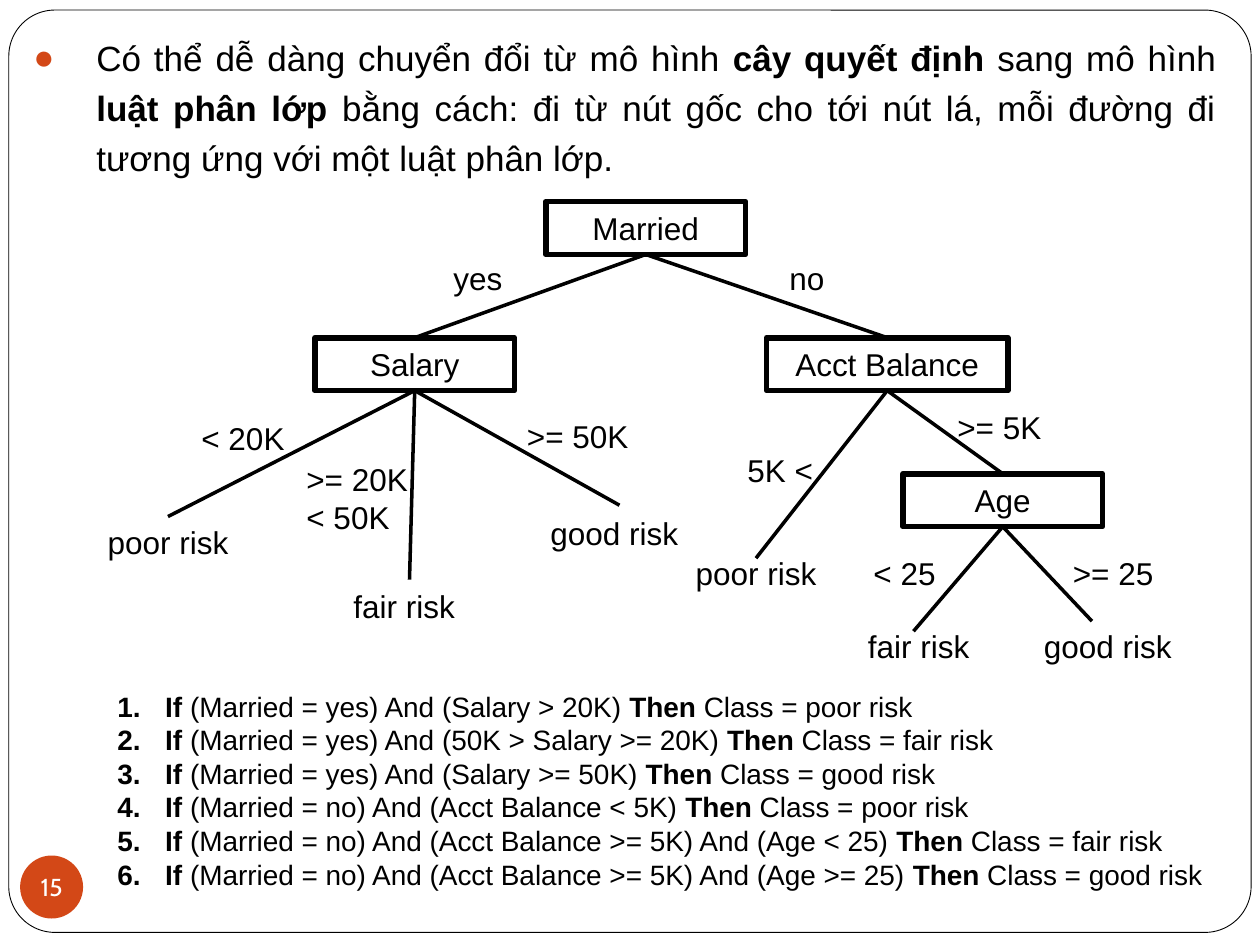
from lxml import etree
from pptx import Presentation
from pptx.dml.color import RGBColor
from pptx.enum.shapes import MSO_CONNECTOR, MSO_SHAPE
from pptx.enum.text import MSO_ANCHOR, MSO_AUTO_SIZE, PP_ALIGN
from pptx.oxml.ns import qn
from pptx.util import Inches, Pt

RECT, ROUND, OVAL = MSO_SHAPE.RECTANGLE, MSO_SHAPE.ROUNDED_RECTANGLE, MSO_SHAPE.OVAL
LEFT, MID, JUST = PP_ALIGN.LEFT, PP_ALIGN.CENTER, PP_ALIGN.JUSTIFY
STRAIGHT = MSO_CONNECTOR.STRAIGHT
TOP, BOTTOM = 0, 2

THEME = {
    "ink": RGBColor(0, 0, 0), "paper": RGBColor(255, 255, 255),
    "accent": RGBColor(0xD3, 0x48, 0x17),
    "font": "Arial", "num_font": "Cabin",
    "lead": 20, "node": 18, "rule": 16, "num": 14,
    "frame_line": 0.5, "box_line": 3.25, "edge_line": 2,
}

# Text between ** marks is bold.
LEAD = ("Có thể dễ dàng chuyển đổi từ mô hình **cây quyết định **sang mô hình "
        "**luật phân lớp **bằng cách: đi từ nút gốc cho tới nút lá, mỗi đường đi "
        "tương ứng với một luật phân lớp.")
RULES = [
    ("(Married = yes) And (Salary > 20K)", "poor"),
    ("(Married = yes) And (50K > Salary >= 20K)", "fair"),
    ("(Married = yes) And (Salary >= 50K)", "good"),
    ("(Married = no) And (Acct Balance < 5K)", "poor"),
    ("(Married = no) And (Acct Balance >= 5K) And (Age < 25)", "fair"),
    ("(Married = no) And (Acct Balance >= 5K) And (Age >= 25)", "good"),
]

# Across: columns of 1/12 inch. Tree levels are evenly spaced; other heights in inches.
COL, LEVEL, FIRST, BOX_H = 1 / 12, 1.08, 1.6, 0.42
BOXES = [  # name, parent, level, column, columns wide
    ("Married", None, 0, 52, 19),
    ("Salary", "Married", 1, 30, 19),
    ("Acct Balance", "Married", 1, 73, 23),
    ("Age", "Acct Balance", 2, 86, 19),
]
LEAVES = [  # class, parent, branch end (column, y), label (column, y)
    ("poor", "Salary", (16, 4.1), (9, 4.1)),
    ("fair", "Salary", (39, 4.6), (32, 4.61)),
    ("good", "Salary", (59, 4.01), (51, 4.03)),
    ("poor", "Acct Balance", (72, 4.43), (65, 4.35)),
    ("fair", "Age", (87, 5.01), (81, 4.93)),
    ("good", "Age", (104, 4.93), (98, 4.93)),
]
LEAF_W = {"poor": 14, "fair": 13, "good": 15}
TESTS = [  # lines, column, y, columns wide
    (["yes"], 42, 2.01, 8), (["no"], 74, 2.01, 8),
    (["< 20K"], 18, 3.28, 11), ([">= 20K", "< 50K"], 28, 3.6, 13),
    ([">= 50K"], 49, 3.26, 14), (["5K <"], 70, 3.53, 9),
    ([">= 5K"], 90, 3.19, 13), (["< 25"], 82, 4.35, 9),
    ([">= 25"], 101, 4.35, 11),
]


def assign(obj, form):
    for key, val in form.items():
        setattr(obj, key, val)


def write(shape, lines, size, align=LEFT, font="font", color="ink", **form):
    frame = shape.text_frame
    assign(frame, {"word_wrap": True, **form})
    for i, line in enumerate(lines):
        para = frame.paragraphs[0] if i == 0 else frame.add_paragraph()
        para.alignment = align
        for j, part in enumerate(line.split("**")):
            if part:
                run = para.add_run()
                run.text = part
                assign(run.font, {"size": Pt(THEME[size]), "name": THEME[font],
                                  "bold": j % 2 == 1})
                run.font.color.rgb = THEME[color]
    return frame.paragraphs


def note(shapes, lines, box, size, align=LEFT):
    area = shapes.add_textbox(*map(Inches, box))
    return write(area, lines, size, align, auto_size=MSO_AUTO_SIZE.SHAPE_TO_FIT_TEXT)


def draw(shapes, kind, box, fill=None, line=None):
    shape = shapes.add_shape(kind, *map(Inches, box))
    shape.shadow.inherit = False
    if fill:
        shape.fill.solid()
        shape.fill.fore_color.rgb = THEME[fill]
    else:
        shape.fill.background()
    if line:
        shape.line.color.rgb = THEME["ink"]
        shape.line.width = Pt(THEME[line])
    else:
        shape.line.fill.background()
    return shape


def branch(shapes, parent, child=None, end=(0, 0)):
    """Line from the foot of a box to the head of a box, or to a point."""
    line = shapes.add_connector(STRAIGHT, 0, 0, *map(Inches, end))
    line.begin_connect(parent, BOTTOM)
    if child is not None:
        line.end_connect(child, TOP)
    line.line.color.rgb = THEME["ink"]
    line.line.width = Pt(THEME["edge_line"])
    etree.SubElement(line._element.spPr, qn("a:effectLst"))


def bullet(para, indent, tag, color=None, **attrs):
    props = para._p.get_or_add_pPr()
    props.set("marL", str(Inches(indent)))
    props.set("indent", str(-Inches(indent)))
    if color:
        tint = etree.SubElement(props, qn("a:buClr"))
        etree.SubElement(tint, qn("a:srgbClr"), val=str(THEME[color]))
    etree.SubElement(props, qn("a:buFont"), typeface=THEME["font"])
    etree.SubElement(props, qn(tag), **attrs)


def tree(shapes):
    nodes = {}
    for name, _, level, col, wide in BOXES:
        box = (col * COL, FIRST + level * LEVEL, wide * COL, BOX_H)
        nodes[name] = draw(shapes, RECT, box, line="box_line")
        write(nodes[name], [name], "node", MID, vertical_anchor=MSO_ANCHOR.MIDDLE)
    for name, parent, *_ in BOXES:
        if parent:
            branch(shapes, nodes[parent], nodes[name])
    for kind, parent, (col, y), (left, top) in LEAVES:
        branch(shapes, nodes[parent], end=(col * COL, y))
        note(shapes, [f"{kind} risk"], (left * COL, top, LEAF_W[kind] * COL, 0.4),
             "node", MID)
    for lines, col, y, wide in TESTS:
        note(shapes, lines, (col * COL, y, wide * COL, 0.1 + 0.3 * len(lines)), "node")


def main():
    deck = Presentation()
    deck.slide_width, deck.slide_height = Inches(10), Inches(7.5)
    shapes = deck.slides.add_slide(deck.slide_layouts[6]).shapes

    frame = draw(shapes, ROUND, (0.07, 0.08, 9.86, 7.32), "paper", "frame_line")
    frame.adjustments[0] = 0.05
    badge = draw(shapes, OVAL, (0.16, 6.79, 0.5, 0.5), "accent")
    sides = dict.fromkeys(("margin_left", "margin_top", "margin_right", "margin_bottom"), 0)
    write(badge, ["15"], "num", MID, "num_font", "paper", word_wrap=False,
          vertical_anchor=MSO_ANCHOR.MIDDLE, **sides)

    tree(shapes.add_group_shape().shapes)

    rules = [f"**If** {test} **Then** Class = {kind} risk" for test, kind in RULES]
    for para in note(shapes, rules, (10 * COL, 5.42, 107 * COL, 1.72), "rule"):
        bullet(para, 0.38, "a:buAutoNum", type="arabicPeriod")
    lead = note(shapes, [LEAD], (2 * COL, 0.17, 115 * COL, 1.31), "lead", JUST)[0]
    lead.line_spacing = 1.2
    bullet(lead, 0.5, "a:buChar", "accent", char="●")

    deck.save("out.pptx")


if __name__ == "__main__":
    main()
